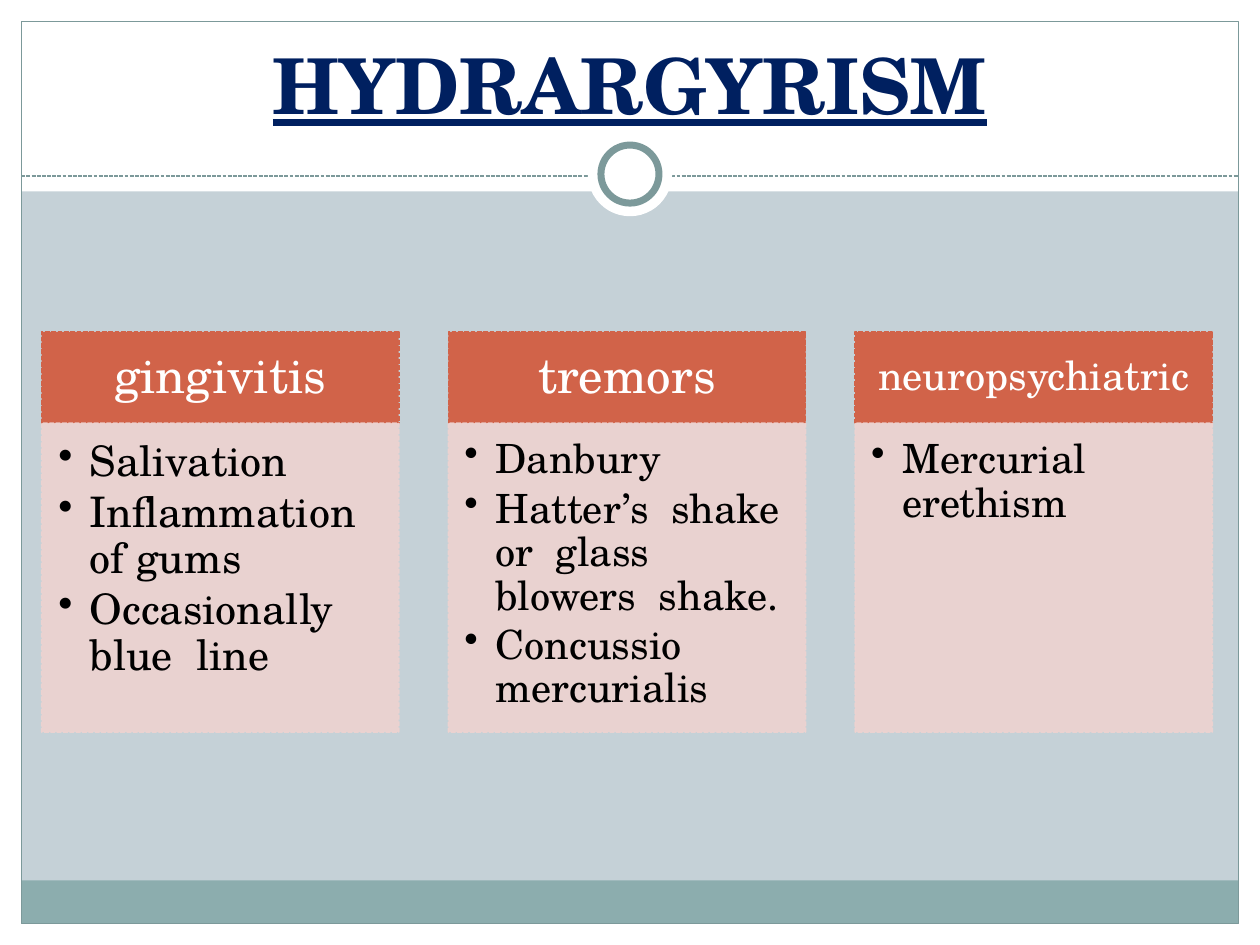
from lxml import etree
from pptx import Presentation
from pptx.dml.color import RGBColor
from pptx.enum.dml import MSO_LINE
from pptx.enum.shapes import MSO_CONNECTOR, MSO_SHAPE
from pptx.enum.text import MSO_ANCHOR as Anchor, PP_ALIGN as Align
from pptx.oxml.ns import qn
from pptx.util import Cm, Pt

FONT = "TeX Gyre Schola"
WHITE, TEAL, BAND = "FFFFFF", "7C999A", "8CADAE"
HEADER, PANEL = "D16349", "EED3D0"
WIDTH, HEIGHT = 25.4, 19.05
MARGIN = 0.43

COLUMNS = [
    ("gingivitis", 28, (0.56, 0.3), 24, (0.34, 0.34, 0.48, 0.51),
     ["Salivation", "Inflammation of gums", "Occasionally  blue  line"]),
    ("tremors", 28, (0.56, 0.3), 23, (0.32, 0.32, 0.46, 0.5),
     ["Danbury", "Hatter’s  shake or  glass  blowers  shake.", "Concussio mercurialis"]),
    ("neuropsychiatric", 23, (0.46, 0.25), 23, (0.32, 0.32, 0.46, 0.5),
     ["Mercurial  erethism"]),
]


def color(value):
    """Turn a hex string into a colour."""
    return RGBColor.from_string(value)


def add_box(slide, box, fill=None, line=None, width=0.75, dashed=False,
            kind=MSO_SHAPE.RECTANGLE):
    """Add a flat shape in the box (left, top, width, height) in centimetres."""
    shape = slide.shapes.add_shape(kind, *map(Cm, box))
    shape.shadow.inherit = False
    if fill:
        shape.fill.solid()
        shape.fill.fore_color.rgb = color(fill)
    else:
        shape.fill.background()
    if line:
        shape.line.color.rgb = color(line)
        shape.line.width = Pt(width)
        if dashed:
            shape.line.dash_style = MSO_LINE.SQUARE_DOT
    else:
        shape.line.fill.background()
    return shape


def make_translucent(shape, percent):
    """Set the opacity of the fill and line of a shape."""
    for element in shape.element.spPr.iter(qn("a:srgbClr")):
        etree.SubElement(element, qn("a:alpha")).set("val", str(percent * 1000))


def set_frame(frame, insets, anchor):
    """Set the wrapping, insets and anchor of a text frame."""
    frame.word_wrap = True
    frame.vertical_anchor = anchor
    (frame.margin_left, frame.margin_top,
     frame.margin_right, frame.margin_bottom) = map(Cm, insets)


def add_run(paragraph, text, size, value):
    """Add one run of text to a paragraph."""
    run = paragraph.add_run()
    run.text = text
    run.font.name = FONT
    run.font.size = Pt(size)
    run.font.color.rgb = color(value)
    return run


def add_bullet(paragraph):
    """Give a paragraph a round bullet with a hanging indent."""
    properties = paragraph._p.get_or_add_pPr()
    properties.set("marL", str(Cm(0.63)))
    properties.set("indent", str(-Cm(0.63)))
    etree.SubElement(properties, qn("a:buChar")).set("char", "•")


def add_background(slide, box):
    """Draw the white border, footer band, frame, divider and ring."""
    left, top, width, height = box
    right, bottom = left + width, top + height
    slide.background.fill.solid()
    slide.background.fill.fore_color.rgb = color("C5D1D7")
    for edge in [(left, bottom - MARGIN, width, MARGIN), (left, top, width, 3.86),
                 (left, top, MARGIN, height), (right - MARGIN, top, MARGIN, height)]:
        add_box(slide, edge, WHITE)
    inner = width - 2 * MARGIN
    add_box(slide, (left + MARGIN, bottom - 1.3, inner, 0.87), BAND)
    add_box(slide, (left + MARGIN, top + MARGIN, inner, height - 2 * MARGIN), line=TEAL)

    divider = slide.shapes.add_connector(
        MSO_CONNECTOR.STRAIGHT, Cm(left + MARGIN), Cm(top + 3.55),
        Cm(right - MARGIN), Cm(top + 3.55))
    divider.line.color.rgb = color(TEAL)
    divider.line.width = Pt(0.75)
    divider.line.dash_style = MSO_LINE.SQUARE_DOT
    etree.SubElement(divider.element.spPr, qn("a:effectLst"))

    for size, line in [(1.7, None), (1.17, TEAL)]:
        ring = (left + (width - size) / 2, top + 3.51 - size / 2, size, size)
        add_box(slide, ring, WHITE, line, 4, kind=MSO_SHAPE.OVAL)


def add_title(slide, box, text):
    """Write the underlined title in the box."""
    frame = slide.shapes.add_textbox(*map(Cm, box)).text_frame
    set_frame(frame, (0.25, 0.13, 0.25, 0.13), Anchor.BOTTOM)
    paragraph = frame.paragraphs[0]
    paragraph.alignment = Align.CENTER
    run = add_run(paragraph, text, 44, "002060")
    run.font.bold = True
    run.font.underline = True


def add_column(slide, box, heading, heading_size, padding, size, insets, items):
    """Draw a heading bar over a panel of bullets."""
    left, top, width, height = box
    bar = 1.84
    header = add_box(slide, (left, top, width, bar), HEADER, HEADER, 0.9, True)
    set_frame(header.text_frame, padding * 2, Anchor.MIDDLE)
    paragraph = header.text_frame.paragraphs[0]
    paragraph.alignment = Align.CENTER
    paragraph.line_spacing = 0.9
    add_run(paragraph, heading, heading_size, WHITE)

    panel = add_box(slide, (left, top + bar, width, height - bar), PANEL, PANEL, 0.9, True)
    make_translucent(panel, 90)
    frame = panel.text_frame
    set_frame(frame, insets, Anchor.TOP)
    for index, item in enumerate(items):
        paragraph = frame.add_paragraph() if index else frame.paragraphs[0]
        add_bullet(paragraph)
        paragraph.alignment = Align.LEFT
        paragraph.line_spacing = 0.9
        paragraph.space_after = Pt(round(size * 0.15, 1))
        add_run(paragraph, item, size, "000000")


def add_columns(slide, box, gap):
    """Spread the columns evenly over the box."""
    left, top, width, height = box
    column_width = (width - gap * (len(COLUMNS) - 1)) / len(COLUMNS)
    for index, column in enumerate(COLUMNS):
        column_left = left + index * (column_width + gap)
        add_column(slide, (column_left, top, column_width, height), *column)


def main():
    """Build the slide and save it."""
    presentation = Presentation()
    presentation.slide_width, presentation.slide_height = Cm(WIDTH), Cm(HEIGHT)
    slide = presentation.slides.add_slide(presentation.slide_layouts[6])
    add_background(slide, (0, 0, WIDTH, HEIGHT))
    add_title(slide, (0.85, 0.64, 23.7, 2.11), "HYDRARGYRISM")
    add_columns(slide, (0.84, 6.69, 23.6, 8.07), 1)
    presentation.save("out.pptx")


if __name__ == "__main__":
    main()
